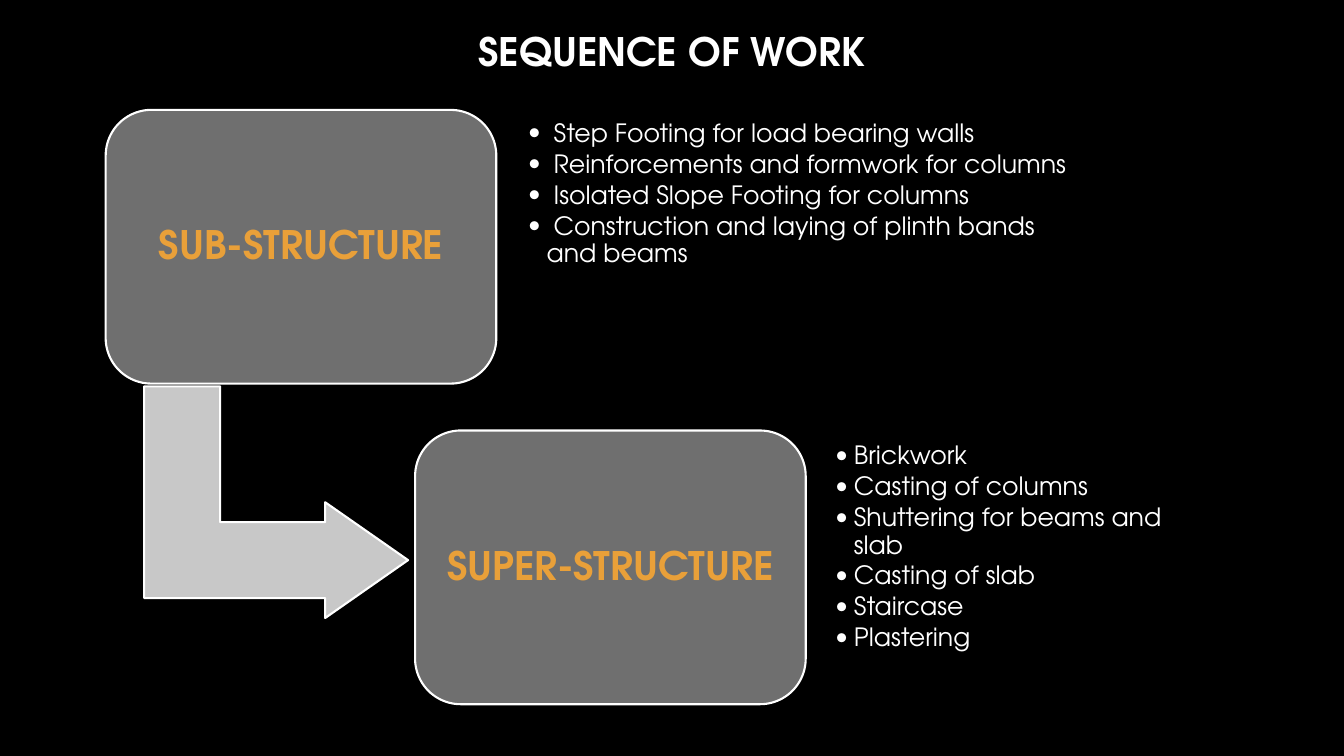
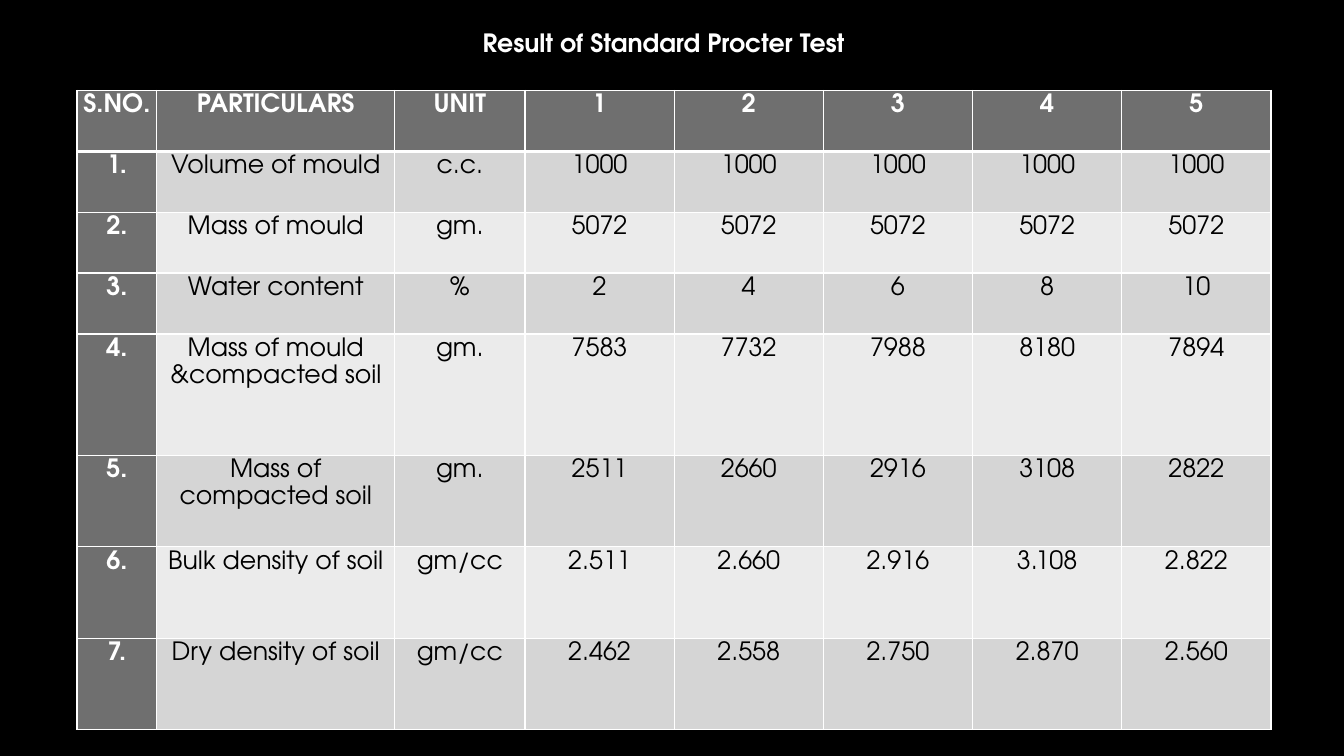
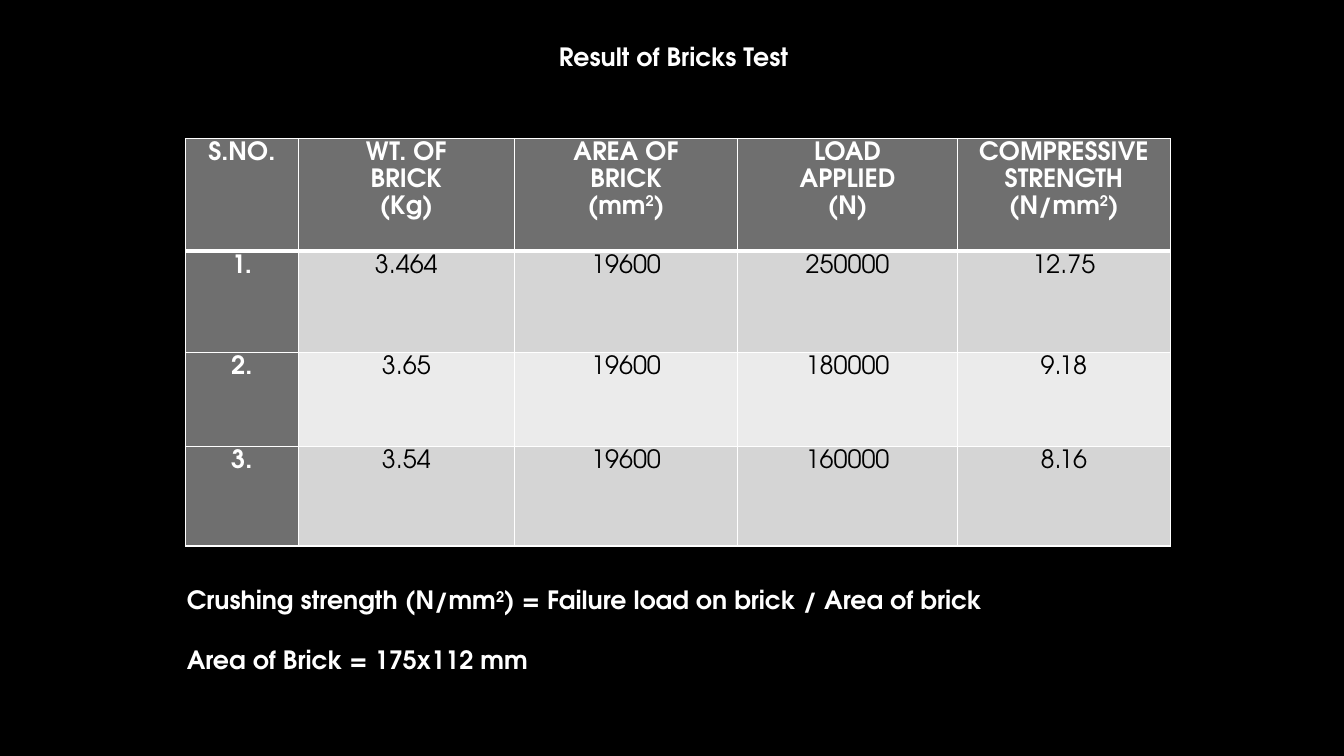
from pptx import Presentation
from pptx.dml.color import RGBColor
from pptx.enum.shapes import MSO_SHAPE
from pptx.enum.text import MSO_ANCHOR, MSO_AUTO_SIZE, PP_ALIGN
from pptx.oxml.ns import qn
from pptx.util import Pt
from lxml import etree

BLACK = RGBColor(0x00, 0x00, 0x00)
WHITE = RGBColor(0xFF, 0xFF, 0xFF)
GREY = RGBColor(0x6F, 0x6F, 0x6F)
ARROW_GREY = RGBColor(0xC8, 0xC8, 0xC8)
BAND_DARK = RGBColor(0xD5, 0xD5, 0xD5)
BAND_LIGHT = RGBColor(0xEB, 0xEB, 0xEB)
ORANGE = RGBColor(0xE9, 0xA0, 0x39)
FONT = "TeX Gyre Adventor"
BODY, HEADING = 18, 28
LEFT, CENTER = PP_ALIGN.LEFT, PP_ALIGN.CENTER
TOP, MIDDLE = MSO_ANCHOR.TOP, MSO_ANCHOR.MIDDLE
NO_AUTOFIT = MSO_AUTO_SIZE.NONE
ROUNDED, BENT_ARROW = MSO_SHAPE.ROUNDED_RECTANGLE, MSO_SHAPE.BENT_UP_ARROW
TITLE_ONLY = 5


def points(*lengths):
    return [Pt(n) for n in lengths]


def style_runs(p, size=BODY, color=WHITE, bold=False):
    for r in p.runs:
        r.font.name = FONT
        r.font.size = Pt(size)
        r.font.bold = bold
        r.font.color.rgb = color


def set_units(p, text):
    """Write text, turning each ² into a raised 2."""
    first, *rest = text.split("²")
    p.text = first
    for part in rest:
        raised = p.add_run()
        raised.text = "2"
        raised.font._element.set("baseline", "30000")
        p.add_run().text = part


def set_margins(tf, x, y):
    tf.margin_left = tf.margin_right = Pt(x)
    tf.margin_top = tf.margin_bottom = Pt(y)


def add_titled_slide(prs, text, box, size=BODY, align=LEFT, wrap=False):
    s = prs.slides.add_slide(prs.slide_layouts[TITLE_ONLY])
    title = s.shapes.title
    title.left, title.top, title.width, title.height = points(*box)
    tf = title.text_frame
    tf.text = text
    tf.word_wrap = wrap
    tf.auto_size = NO_AUTOFIT
    tf.vertical_anchor = TOP
    p = tf.paragraphs[0]
    p.alignment = align
    style_runs(p, size, bold=True)
    return s


def add_outlined(s, kind, box, fill):
    sp = s.shapes.add_shape(kind, *points(*box))
    sp.shadow.inherit = False
    sp.fill.solid()
    sp.fill.fore_color.rgb = fill
    sp.line.color.rgb = WHITE
    sp.line.width = Pt(1.5)
    return sp


def add_bent_arrow(s, box):
    sp = add_outlined(s, BENT_ARROW, box, ARROW_GREY)
    sp.rotation = 90
    for i, value in enumerate((0.328, 0.25, 0.358)):
        sp.adjustments[i] = value


def add_bullet(p):
    pPr = p._p.get_or_add_pPr()
    pPr.set("marL", str(Pt(13.5)))
    pPr.set("indent", str(-Pt(13.5)))
    etree.SubElement(pPr, qn("a:buFont")).set("typeface", FONT)
    etree.SubElement(pPr, qn("a:buChar")).set("char", "•")


def add_stage(s, x, y, name, steps, list_box):
    """Rounded box at x, y; list_box is measured from its top left corner."""
    sp = add_outlined(s, ROUNDED, (x, y, 279, 195.5), GREY)
    tf = sp.text_frame
    tf.text = name
    tf.vertical_anchor = MIDDLE
    set_margins(tf, 0, 0)
    p = tf.paragraphs[0]
    p.alignment = CENTER
    p.line_spacing = 0.9
    style_runs(p, HEADING, ORANGE, True)

    dx, dy, w, h = list_box
    tf = s.shapes.add_textbox(*points(x + dx, y + dy, w, h)).text_frame
    tf.word_wrap = True
    tf.vertical_anchor = MIDDLE
    set_margins(tf, 5, 5)
    for i, step in enumerate(steps):
        p = tf.add_paragraph() if i else tf.paragraphs[0]
        p.text = step
        add_bullet(p)
        p.line_spacing = 0.9
        p.space_after = Pt(2.7)
        style_runs(p)


def set_borders(cell, top, bottom):
    tcPr = cell._tc.get_or_add_tcPr()
    for side, width in (("L", 1), ("R", 1), ("T", top), ("B", bottom)):
        ln = etree.SubElement(tcPr, qn("a:ln" + side), w=str(Pt(width)))
        fill = etree.SubElement(ln, qn("a:solidFill"))
        etree.SubElement(fill, qn("a:srgbClr"), val=str(WHITE))


def format_cell(cell, text, row, col, margin):
    heading = row == 0 or col == 0
    set_borders(cell, 3 if row == 1 else 1, 3 if row == 0 else 1)
    cell.fill.solid()
    cell.fill.fore_color.rgb = GREY if heading else BAND_DARK if row % 2 else BAND_LIGHT
    set_margins(cell, margin, 0)
    cell.vertical_anchor = TOP
    tf = cell.text_frame
    for i, line in enumerate(text.split("\n")):
        p = tf.add_paragraph() if i else tf.paragraphs[0]
        set_units(p, line)
        p.alignment = CENTER
        p.line_spacing = 1.15
        style_runs(p, color=WHITE if heading else BLACK, bold=heading)


def add_results(s, x, y, widths, heights, rows, margin):
    frame = s.shapes.add_table(len(rows), len(widths),
                               *points(x, y, sum(widths), sum(heights)))
    table = frame.table
    table.horz_banding = False
    for column, width in zip(table.columns, widths):
        column.width = Pt(width)
    for i, (height, texts) in enumerate(zip(heights, rows)):
        table.rows[i].height = Pt(height)
        for j, text in enumerate(texts):
            format_cell(table.cell(i, j), text, i, j, margin)


def add_notes_below(s, box, lines):
    tf = s.shapes.add_textbox(*points(*box)).text_frame
    tf.word_wrap = True
    for i, line in enumerate(lines):
        p = tf.add_paragraph() if i else tf.paragraphs[0]
        set_units(p, line)
        if i:
            p.space_before = Pt(21.2)
        style_runs(p, bold=True)


def build_sequence(prs):
    s = add_titled_slide(prs, "SEQUENCE OF WORK", (269, 16, 422, 41),
                         HEADING, CENTER, True)
    add_bent_arrow(s, (114.5, 264.5, 165.5, 188.5))
    add_stage(s, 75.5, 78.5, "SUB-STRUCTURE", [
        " Step Footing for load bearing walls",
        " Reinforcements and formwork for columns",
        " Isolated Slope Footing for columns",
        " Construction and laying of plinth bands\vand beams",
    ], (296.5, 18.5, 433, 83.5))
    add_stage(s, 296.5, 307.5, "SUPER-STRUCTURE", [
        "Brickwork", "Casting of columns", "Shuttering for beams and slab",
        "Casting of slab", "Staircase", "Plastering",
    ], (295, -16, 263, 199.5))


def build_procter(prs):
    s = add_titled_slide(prs, "Result of Standard Procter Test", (337.5, 16, 281, 29))
    rows = [
        ["S.NO.", "PARTICULARS", "UNIT", "1", "2", "3", "4", "5"],
        ["1.", "Volume of mould", "c.c."] + ["1000"] * 5,
        ["2.", "Mass of mould", "gm."] + ["5072"] * 5,
        ["3.", "Water content", "%", "2", "4", "6", "8", "10"],
        ["4.", "Mass of mould &compacted soil", "gm.",
         "7583", "7732", "7988", "8180", "7894"],
        ["5.", "Mass of compacted soil", "gm.",
         "2511", "2660", "2916", "3108", "2822"],
        ["6.", "Bulk density of soil", "gm/cc",
         "2.511", "2.660", "2.916", "3.108", "2.822"],
        ["7.", "Dry density of soil", "gm/cc",
         "2.462", "2.558", "2.750", "2.870", "2.560"],
    ]
    heights = [21.74 * units for units in (2, 2, 2, 2, 4, 3, 3, 3)]
    add_results(s, 55, 64.7, [57, 170, 93] + [106.6] * 5, heights, rows, 3.6)


def build_bricks(prs):
    s = add_titled_slide(prs, "Result of Bricks Test", (392, 26, 181, 29))
    rows = [
        ["S.NO.", "WT. OF\nBRICK\n(Kg)", "AREA OF\nBRICK\n(mm²)",
         "LOAD\nAPPLIED\n(N)", "COMPRESSIVE\nSTRENGTH\n(N/mm²)"],
        ["1.", "3.464", "19600", "250000", "12.75"],
        ["2.", "3.65", "19600", "180000", "9.18"],
        ["3.", "3.54", "19600", "160000", "8.16"],
    ]
    add_results(s, 132.5, 99, [80.5, 154.5, 159.5, 157, 152],
                [80.5, 72.5, 67, 71], rows, 5)
    add_notes_below(s, (126.3, 414, 710, 73), [
        "Crushing strength (N/mm²) = Failure load on brick / Area of brick",
        "Area of Brick = 175x112 mm",
    ])


def main():
    prs = Presentation()
    prs.slide_width, prs.slide_height = points(960, 540)
    background = prs.slide_master.background.fill
    background.solid()
    background.fore_color.rgb = BLACK
    build_sequence(prs)
    build_procter(prs)
    build_bricks(prs)
    prs.save("out.pptx")


if __name__ == "__main__":
    main()
